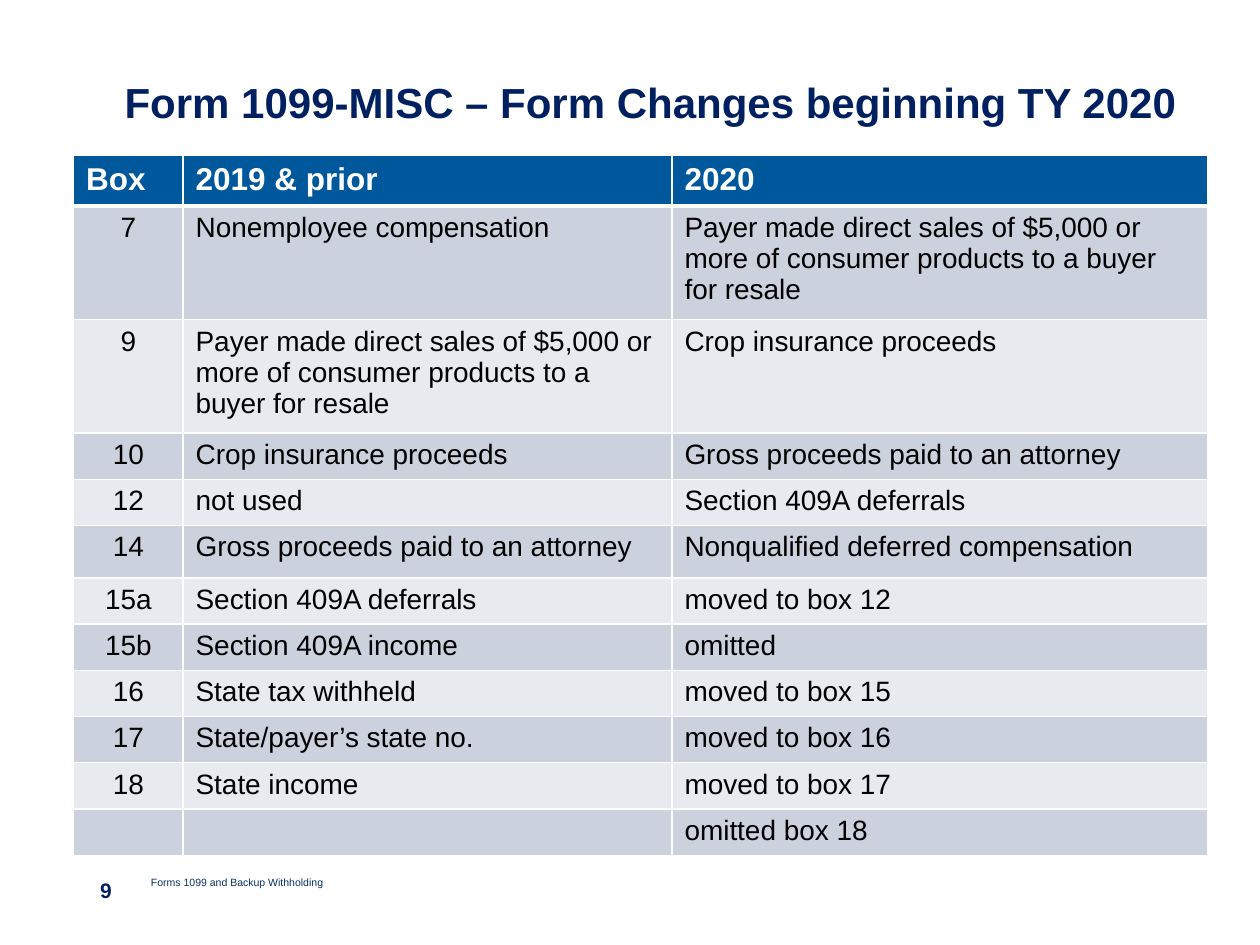
from lxml import etree
from pptx import Presentation
from pptx.dml.color import RGBColor
from pptx.enum.text import MSO_ANCHOR, MSO_AUTO_SIZE, PP_ALIGN
from pptx.oxml.ns import qn
from pptx.util import Pt

LEFT, CENTER = PP_ALIGN.LEFT, PP_ALIGN.CENTER
MIDDLE = MSO_ANCHOR.MIDDLE
NO_AUTOFIT = MSO_AUTO_SIZE.NONE

NAVY = RGBColor(0x00, 0x20, 0x60)
FOOTER_BLUE = RGBColor(0x0A, 0x31, 0x61)
HEADER_BLUE = RGBColor(0x00, 0x58, 0x9C)
BANDS = (RGBColor(0xCC, 0xD1, 0xDE), RGBColor(0xE7, 0xEA, 0xEF))
WHITE = RGBColor(0xFF, 0xFF, 0xFF)
BLACK = RGBColor(0x00, 0x00, 0x00)

DIRECT_SALES = ("Payer made direct sales of $5,000 or more of consumer "
                "products to a buyer for resale")
CROP = "Crop insurance proceeds"
ATTORNEY = "Gross proceeds paid to an attorney"
DEFERRALS = "Section 409A deferrals"

COLUMN_WIDTHS = (62.6, 279.4, 306)
HEADER_HEIGHT = 29
# Each row: height, then box, 2019 text and 2020 text
BOX_CHANGES = [
    (64.9, "7", "Nonemployee compensation", DIRECT_SALES),
    (64.9, "9", DIRECT_SALES, CROP),
    (26.4, "10", CROP, ATTORNEY),
    (26.4, "12", "not used", DEFERRALS),
    (30, "14", ATTORNEY, "Nonqualified deferred compensation"),
    (26.4, "15a", DEFERRALS, "moved to box 12"),
    (26.4, "15b", "Section 409A income", "omitted"),
    (26.4, "16", "State tax withheld", "moved to box 15"),
    (26.4, "17", "State/payer’s state no.", "moved to box 16"),
    (26.4, "18", "State income", "moved to box 17"),
    (26.4, "", "", "omitted box 18"),
]


def write(frame, text, size=16, color=BLACK, bold=False, align=LEFT, spacing=None):
    paragraph = frame.paragraphs[0]
    paragraph.alignment = align
    if spacing:
        paragraph.line_spacing = spacing
    if not text:
        # Keeps an empty cell from growing to the default text size
        etree.SubElement(paragraph._p, qn("a:endParaRPr"), sz=str(size * 100))
        return
    run = paragraph.add_run()
    run.text = text
    run.font.name = "Arial"
    run.font.size = Pt(size)
    run.font.bold = bold
    run.font.color.rgb = color


def set_borders(cell, color, bottom_width):
    properties = cell._tc.get_or_add_tcPr()
    for side in ("lnL", "lnR", "lnT", "lnB"):
        width = bottom_width if side == "lnB" else 1
        line = etree.SubElement(properties, qn(f"a:{side}"), w=str(Pt(width)))
        fill = etree.SubElement(line, qn("a:solidFill"))
        etree.SubElement(fill, qn("a:srgbClr"), val=str(color))


class FormChangesSlide:
    def __init__(self, presentation):
        self.slide = presentation.slides.add_slide(presentation.slide_layouts[5])

    def _place(self, shape, left, top, width, height):
        shape.left, shape.top = Pt(left), Pt(top)
        shape.width, shape.height = Pt(width), Pt(height)
        frame = shape.text_frame
        frame.word_wrap = True
        frame.auto_size = NO_AUTOFIT
        frame.vertical_anchor = MIDDLE
        return frame

    def title(self, text, *bounds):
        frame = self._place(self.slide.shapes.title, *bounds)
        write(frame, text, size=24, color=NAVY, bold=True, spacing=0.9)

    def label(self, text, *bounds, **text_format):
        box = self.slide.shapes.add_textbox(0, 0, 0, 0)
        write(self._place(box, *bounds), text, **text_format)

    def cell(self, cell, text, fill, bottom_width=1, **text_format):
        set_borders(cell, WHITE, bottom_width)
        cell.fill.solid()
        cell.fill.fore_color.rgb = fill
        write(cell.text_frame, text, **text_format)

    def table(self, headings, changes, left, top):
        heights = [HEADER_HEIGHT] + [change[0] for change in changes]
        table = self.slide.shapes.add_table(
            len(heights), len(headings), Pt(left), Pt(top),
            Pt(sum(COLUMN_WIDTHS)), Pt(sum(heights))).table
        for column, width in zip(table.columns, COLUMN_WIDTHS):
            column.width = Pt(width)
        for row, height in zip(table.rows, heights):
            row.height = Pt(height)
        for column, heading in enumerate(headings):
            self.cell(table.cell(0, column), heading, HEADER_BLUE,
                      bottom_width=3, size=18, color=WHITE, bold=True)
        for row, (_, *texts) in enumerate(changes, start=1):
            for column, text in enumerate(texts):
                self.cell(table.cell(row, column), text, BANDS[(row - 1) % 2],
                          align=LEFT if column else CENTER)


def main():
    presentation = Presentation()
    presentation.slide_width, presentation.slide_height = Pt(720), Pt(540)
    page = FormChangesSlide(presentation)
    page.title("Form 1099-MISC – Form Changes beginning TY 2020", 64, 36, 630, 48)
    page.label("9", 41.8, 501.8, 37.4, 20.2,
               size=12, color=NAVY, bold=True, align=CENTER, spacing=0.3)
    page.table(("Box", "2019 & prior", "2020"), BOX_CHANGES, 42, 88.7)
    page.label("Forms 1099 and Backup Withholding", 79.2, 489.6, 288, 28.8,
               size=6, color=FOOTER_BLUE)
    presentation.save("out.pptx")


if __name__ == "__main__":
    main()
